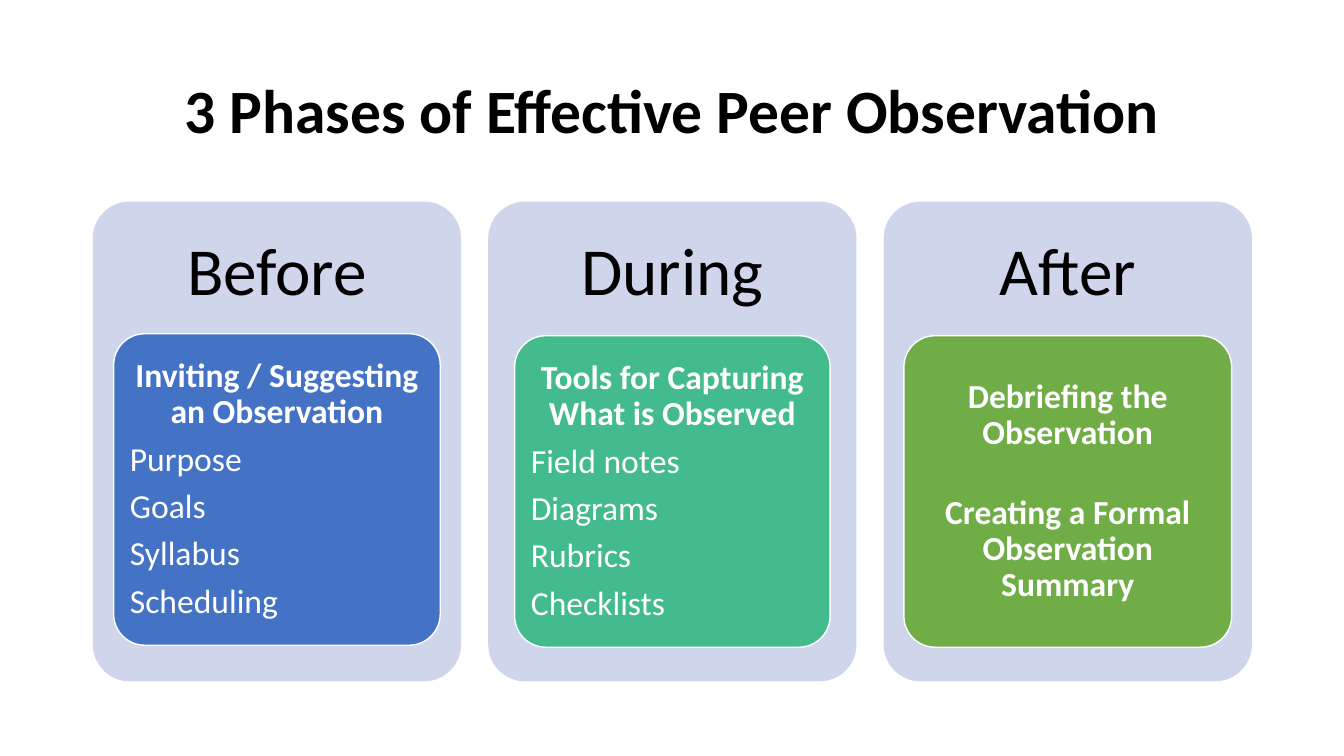
from dataclasses import dataclass

from pptx import Presentation
from pptx.dml.color import RGBColor
from pptx.enum.shapes import MSO_SHAPE
from pptx.enum.text import MSO_ANCHOR, PP_ALIGN
from pptx.util import Cm, Pt

BLACK = RGBColor(0x00, 0x00, 0x00)
WHITE = RGBColor(0xFF, 0xFF, 0xFF)
LAVENDER = RGBColor(0xCF, 0xD5, 0xEA)
BLUE = RGBColor(0x44, 0x72, 0xC4)
TEAL = RGBColor(0x43, 0xBB, 0x8D)
GREEN = RGBColor(0x70, 0xAD, 0x47)

MARGIN = 2.34
CONTENT_WIDTH = 29.21
PANEL_WIDTH = 9.28
PANEL_TOP, PANEL_HEIGHT = 5.08, 12.09
HEADING_HEIGHT = 3.63
CARD_HEIGHT = 7.85


@dataclass
class Phase:
    name: str
    color: RGBColor
    card_width: float
    card_offset: float
    headlines: list
    topics: list


PHASES = [
    Phase("Before", BLUE, 8.23, 3.33, ["Inviting / Suggesting an Observation"],
          ["Purpose", "Goals", "Syllabus", "Scheduling"]),
    Phase("During", TEAL, 7.95, 3.38, ["Tools for Capturing What is Observed"],
          ["Field notes", "Diagrams", "Rubrics", "Checklists"]),
    Phase("After", GREEN, 8.26, 3.38,
          ["Debriefing the Observation", "Creating a Formal Observation Summary"], []),
]


def write(frame, text, size, color=BLACK, bold=False, align=PP_ALIGN.CENTER, after=0):
    first = frame.paragraphs[0]
    paragraph = frame.add_paragraph() if first.runs else first
    paragraph.alignment = align
    paragraph.line_spacing = 0.9
    paragraph.space_after = Pt(after)
    run = paragraph.add_run()
    run.text = text
    run.font.name = "Calibri"
    run.font.size = Pt(size)
    run.font.bold = bold
    run.font.color.rgb = color


def prepare(frame, side, vertical):
    frame.word_wrap = True
    frame.vertical_anchor = MSO_ANCHOR.MIDDLE
    frame.margin_left = frame.margin_right = Cm(side)
    frame.margin_top = frame.margin_bottom = Cm(vertical)
    return frame


def add_text_area(slide, box, side, vertical):
    area = slide.shapes.add_textbox(*map(Cm, box))
    return prepare(area.text_frame, side, vertical)


def add_rounded(slide, box, fill, outline=None):
    rounded = slide.shapes.add_shape(MSO_SHAPE.ROUNDED_RECTANGLE, *map(Cm, box))
    rounded.adjustments[0] = 0.1
    rounded.shadow.inherit = False
    rounded.fill.solid()
    rounded.fill.fore_color.rgb = fill
    if outline is None:
        rounded.line.fill.background()
    else:
        rounded.line.color.rgb = outline
        rounded.line.width = Pt(1)
    return rounded


def add_title(slide, box):
    write(add_text_area(slide, box, 0.25, 0.13),
          "3 Phases of Effective Peer Observation", size=44, bold=True)


def add_card(slide, box, phase):
    card = add_rounded(slide, box, phase.color, outline=WHITE)
    content = prepare(card.text_frame, 0.18, 0.13)
    headline_gap = 8 if phase.topics else 31
    for headline in phase.headlines:
        write(content, headline, size=24, color=WHITE, bold=True, after=headline_gap)
    for topic in phase.topics:
        write(content, topic, size=24, color=WHITE, align=PP_ALIGN.LEFT, after=8)


def add_phase(slide, box, phase):
    left, top, width, height = box
    add_rounded(slide, box, LAVENDER)
    heading = add_text_area(slide, (left, top, width, HEADING_HEIGHT), 0.51, 0.51)
    write(heading, phase.name, size=48)
    card_left = left + (width - phase.card_width) / 2
    card_box = (card_left, top + phase.card_offset, phase.card_width, CARD_HEIGHT)
    add_card(slide, card_box, phase)


def main():
    deck = Presentation()
    deck.slide_width, deck.slide_height = Cm(33.87), Cm(19.05)
    slide = deck.slides.add_slide(deck.slide_layouts[6])
    add_title(slide, (MARGIN, 1.02, CONTENT_WIDTH, 3.68))
    pitch = (CONTENT_WIDTH - PANEL_WIDTH) / (len(PHASES) - 1)
    for index, phase in enumerate(PHASES):
        box = (MARGIN + index * pitch, PANEL_TOP, PANEL_WIDTH, PANEL_HEIGHT)
        add_phase(slide, box, phase)
    deck.save("out.pptx")


if __name__ == "__main__":
    main()
